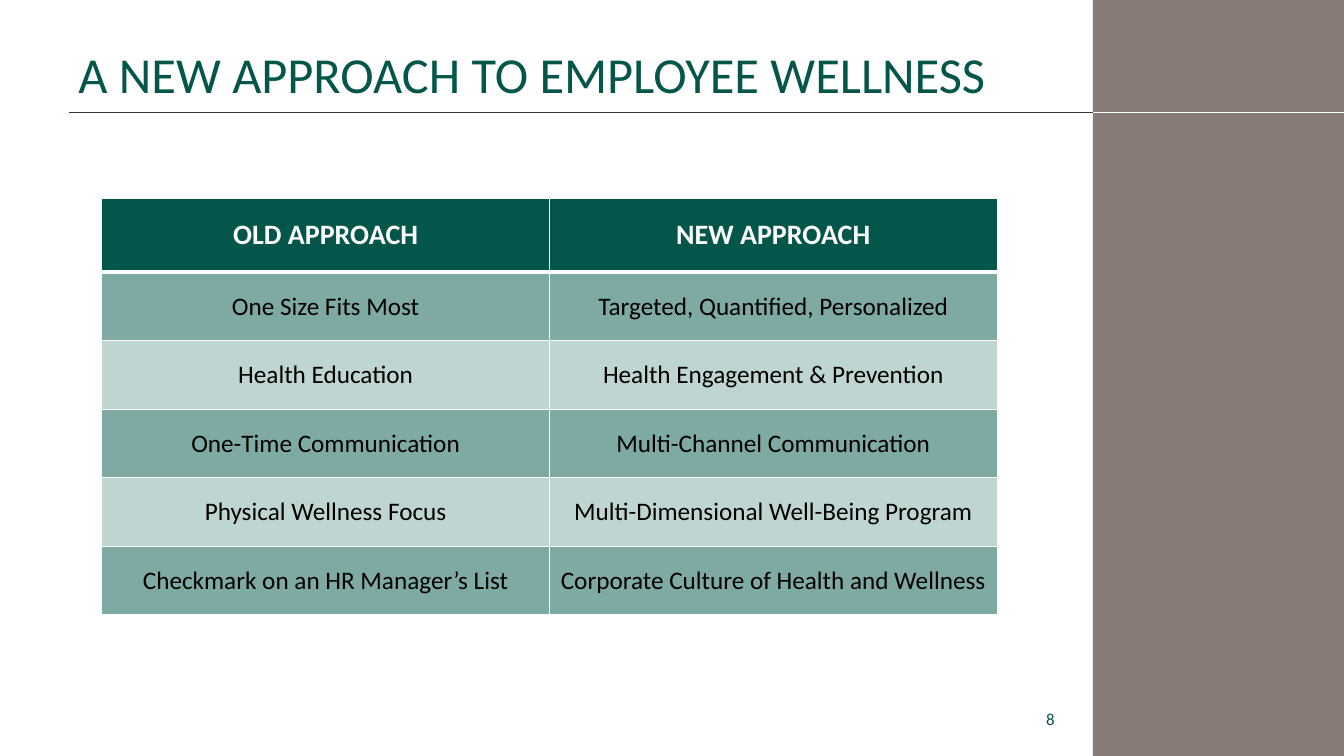
from lxml import etree
from pptx import Presentation
from pptx.dml.color import RGBColor
from pptx.enum import shapes, text
from pptx.oxml import ns
from pptx.util import Inches, Pt

COLORS = {
    "green": "04564A",
    "mid_green": "7FAAA4",
    "pale_green": "BFD5D2",
    "taupe": "877B77",
    "dark_rule": "433635",
    "white": "FFFFFF",
    "black": "000000",
}
PANEL_LEFT, RULE_TOP = 10.84, 1.11


def write(frame, wording, size, color, align, bold=False):
    frame.word_wrap = True
    frame.vertical_anchor = text.MSO_ANCHOR.MIDDLE
    paragraph = frame.paragraphs[0]
    paragraph.text = wording
    paragraph.alignment = align
    font = paragraph.runs[0].font
    for name, value in {"name": "Calibri", "size": Pt(size), "bold": bold}.items():
        setattr(font, name, value)
    font.color.rgb = RGBColor.from_string(COLORS[color])
    return paragraph


def add_border(cell, side, width):
    properties = cell._tc.get_or_add_tcPr()
    line = etree.SubElement(properties, ns.qn(f"a:ln{side}"), w=str(Pt(width)))
    fill = etree.SubElement(line, ns.qn("a:solidFill"))
    etree.SubElement(fill, ns.qn("a:srgbClr"), val=COLORS["white"])


presentation = Presentation()
presentation.slide_width = Inches(13.33)
presentation.slide_height = Inches(7.5)
slide = presentation.slides.add_slide(presentation.slide_layouts[6])

# Page number
page_number = slide.shapes.add_textbox(Inches(7.56), Inches(6.93), Inches(3), Inches(0.4))
write(page_number.text_frame, "8", 12, "green", text.PP_ALIGN.RIGHT)

# Side panel
panel = slide.shapes.add_shape(
    shapes.MSO_SHAPE.RECTANGLE, Inches(PANEL_LEFT), 0, Inches(2.49), Inches(7.5))
panel.shadow.inherit = False
panel.fill.solid()
panel.fill.fore_color.rgb = RGBColor.from_string(COLORS["taupe"])
panel.line.fill.background()

# Rule under the title, changing colour on the panel
for start, end, color in [(0.68, PANEL_LEFT, "dark_rule"), (PANEL_LEFT, 13.33, "white")]:
    rule = slide.shapes.add_connector(
        shapes.MSO_CONNECTOR.STRAIGHT,
        Inches(start), Inches(RULE_TOP), Inches(end), Inches(RULE_TOP))
    rule.line.width = Pt(0.5)
    rule.line.color.rgb = RGBColor.from_string(COLORS[color])
    etree.SubElement(rule._element.spPr, ns.qn("a:effectLst"))

# Title
title = slide.shapes.add_textbox(Inches(0.68), Inches(0.45), Inches(10.16), Inches(0.63))
title_paragraph = write(title.text_frame, "A NEW APPROACH TO EMPLOYEE WELLNESS",
                        36, "green", text.PP_ALIGN.LEFT)
title_paragraph.line_spacing = 0.9

# Comparison table
approaches = [
    ("OLD APPROACH", "NEW APPROACH"),
    ("One Size Fits Most", "Targeted, Quantified, Personalized"),
    ("Health Education", "Health Engagement & Prevention"),
    ("One-Time Communication", "Multi-Channel Communication"),
    ("Physical Wellness Focus", "Multi-Dimensional Well-Being Program"),
    ("Checkmark on an HR Manager’s List", "Corporate Culture of Health and Wellness"),
]
table = slide.shapes.add_table(
    len(approaches), 2, Inches(1.01), Inches(1.97), Inches(8.88), Inches(4.13)).table
for column in table.columns:
    column.width = Inches(4.44)

for row_index, row in enumerate(approaches):
    is_header = row_index == 0
    table.rows[row_index].height = Inches(0.73 if is_header else 0.68)
    if is_header:
        fill_color, font_color, size = "green", "white", 20
    else:
        fill_color = "mid_green" if row_index % 2 else "pale_green"
        font_color, size = "black", 18
    # A thick line separates the header from the body
    borders = {"L": 1, "R": 1, "T": 3 if row_index == 1 else 1, "B": 3 if is_header else 1}
    for column_index, wording in enumerate(row):
        cell = table.cell(row_index, column_index)
        for side, width in borders.items():
            add_border(cell, side, width)
        cell.fill.solid()
        cell.fill.fore_color.rgb = RGBColor.from_string(COLORS[fill_color])
        write(cell.text_frame, wording, size, font_color, text.PP_ALIGN.CENTER, is_header)
        cell.vertical_anchor = text.MSO_ANCHOR.MIDDLE

presentation.save("out.pptx")
